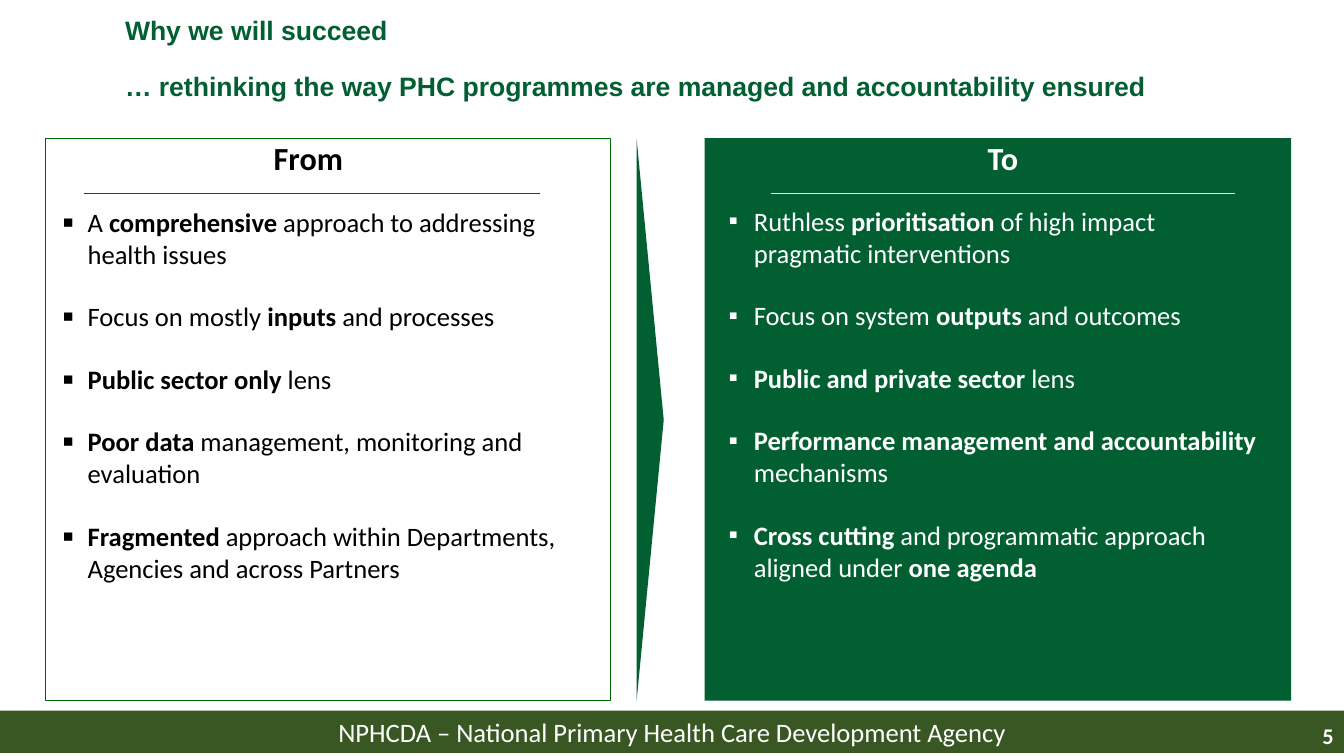
from lxml.etree import SubElement
from pptx import Presentation
from pptx.dml.color import RGBColor
from pptx.enum.shapes import MSO_CONNECTOR, MSO_SHAPE
from pptx.enum.text import MSO_ANCHOR, MSO_AUTO_SIZE, PP_ALIGN
from pptx.oxml.ns import qn
from pptx.util import Pt

COLORS = {
    "green": "015F32",
    "edge": "006600",
    "olive": "385723",
    "pale": "E7E6E6",
    "white": "FFFFFF",
    "black": "000000",
}
TOP, HEIGHT = 98.6, 401.8
RULE = 138.2

TITLE = [
    "Why we will succeed",
    "… rethinking the way PHC programmes are managed and accountability ensured",
]
# Asterisks enclose bold words.
FROM = [
    "A *comprehensive* approach to addressing health issues",
    "Focus on mostly *inputs* and processes",
    "*Public sector only* lens",
    "*Poor data* management, monitoring and evaluation",
    "*Fragmented* approach within Departments, Agencies and across Partners",
]
TO = [
    "Ruthless *prioritisation* of high impact pragmatic interventions",
    "Focus on system *outputs* and outcomes",
    "*Public and private sector* lens",
    "*Performance management and accountability* mechanisms",
    "*Cross cutting* and programmatic approach aligned under *one agenda*",
]


def color(name):
    return RGBColor.from_string(COLORS[name])


def place(shape, left, top, width, height):
    shape.left, shape.top = Pt(left), Pt(top)
    shape.width, shape.height = Pt(width), Pt(height)


def add_bullet(para, ink, scale):
    """Give a paragraph a hanging square bullet, scaled in percent."""
    props = para._p.get_or_add_pPr()
    props.set("marL", str(Pt(18.7)))
    props.set("indent", str(Pt(-18)))
    tint = SubElement(props, qn("a:buClr"))
    SubElement(tint, qn("a:srgbClr"), val=COLORS[ink])
    SubElement(props, qn("a:buSzPct"), val=str(scale * 1000))
    SubElement(props, qn("a:buFont"), typeface="Arial")
    SubElement(props, qn("a:buChar"), char="▪")


def write(shape, lines, size=19, font="Calibri", ink="black", bold=False,
          align=PP_ALIGN.LEFT, anchor=MSO_ANCHOR.TOP, inset=(0, 0),
          gap=0, pitch=1.0, bullet=None):
    """Fill a shape with paragraphs; bullet is a size in percent."""
    frame = shape.text_frame
    frame.word_wrap = True
    frame.auto_size = MSO_AUTO_SIZE.NONE
    frame.vertical_anchor = anchor
    frame.margin_left = frame.margin_right = Pt(inset[0])
    frame.margin_top = frame.margin_bottom = Pt(inset[1])
    for row, line in enumerate(lines):
        para = frame.add_paragraph() if row else frame.paragraphs[0]
        if bullet:
            add_bullet(para, ink, bullet)
        para.alignment = align
        para.line_spacing = pitch
        para.space_before = Pt(gap if row else 0)
        para.space_after = Pt(0)
        for part, words in enumerate(line.split("*")):
            if not words:
                continue
            run = para.add_run()
            run.text = words
            run.font.name = font
            run.font.size = Pt(size)
            run.font.bold = bold or part % 2 == 1
            run.font.color.rgb = color(ink)


def add_block(slide, kind, box, fill=None, edge=None):
    shape = slide.shapes.add_shape(kind, *map(Pt, box))
    shape.shadow.inherit = False
    if fill:
        shape.fill.solid()
        shape.fill.fore_color.rgb = color(fill)
    else:
        shape.fill.background()
    if edge:
        shape.line.color.rgb = color(edge)
        shape.line.width = Pt(0.75)
    else:
        shape.line.fill.background()
    return shape


def add_rule(slide, left, right, ink):
    line = slide.shapes.add_connector(
        MSO_CONNECTOR.STRAIGHT, Pt(left), Pt(RULE), Pt(right), Pt(RULE))
    line.line.color.rgb = color(ink)
    line.line.width = Pt(0.75)
    SubElement(line._element.spPr, qn("a:effectLst"))


def add_label(slide, box, text, **style):
    write(slide.shapes.add_textbox(*map(Pt, box)), [text], **style)


def add_panel(slide, body, head, items, frame, rule, center, area,
              ink, line, scale, fill=None, edge=None):
    """Draw one side: panel, heading, rule and bulleted list."""
    left, width = frame
    add_block(slide, MSO_SHAPE.RECTANGLE, (left, TOP, width, HEIGHT),
              fill, edge)
    add_rule(slide, *rule, line)
    add_label(slide, (center - 55, TOP, 110, 28), head, size=23,
              ink=ink, bold=True, align=PP_ALIGN.CENTER)
    place(body, *area)
    write(body, items, ink=ink, gap=21.9, bullet=scale)
    body.element.getparent().append(body.element)  # bring to front


def main():
    deck = Presentation()
    deck.slide_width, deck.slide_height = Pt(960), Pt(540)
    slide = deck.slides.add_slide(deck.slide_layouts[3])
    title, left, right = slide.placeholders

    footer = add_block(slide, MSO_SHAPE.RECTANGLE, (0, 507.6, 960, 30.2),
                       fill="olive")
    write(footer, ["NPHCDA – National Primary Health Care Development Agency"],
          ink="white", align=PP_ALIGN.CENTER, inset=(7.2, 3.6))

    place(title, 82.1, 8.6, 839.5, 68.4)
    write(title, TITLE, font="Arial", ink="green", bold=True,
          anchor=MSO_ANCHOR.MIDDLE, inset=(7.2, 3.6), gap=20, pitch=0.9)

    add_panel(slide, left, "From", FROM, frame=(32.4, 403.9),
              rule=(59.8, 385.9), center=220.3, area=(43.9, 146.9, 371.5, 273),
              ink="black", line="edge", scale=125, edge="edge")
    add_panel(slide, right, "To", TO, frame=(503.3, 419),
              rule=(550.8, 882), center=716.4, area=(519.8, 146.2, 383.8, 273),
              ink="white", line="pale", scale=100, fill="green")

    arrow = add_block(slide, MSO_SHAPE.ISOSCELES_TRIANGLE,
                      (263.5, 290.2, HEIGHT, 19.4), fill="green")
    arrow.rotation = 90

    add_label(slide, (743.8, 511.2, 216, 28.8), "5", size=16, ink="white",
              bold=True, align=PP_ALIGN.RIGHT, anchor=MSO_ANCHOR.MIDDLE,
              inset=(7.2, 3.6))
    deck.save("out.pptx")


if __name__ == "__main__":
    main()
